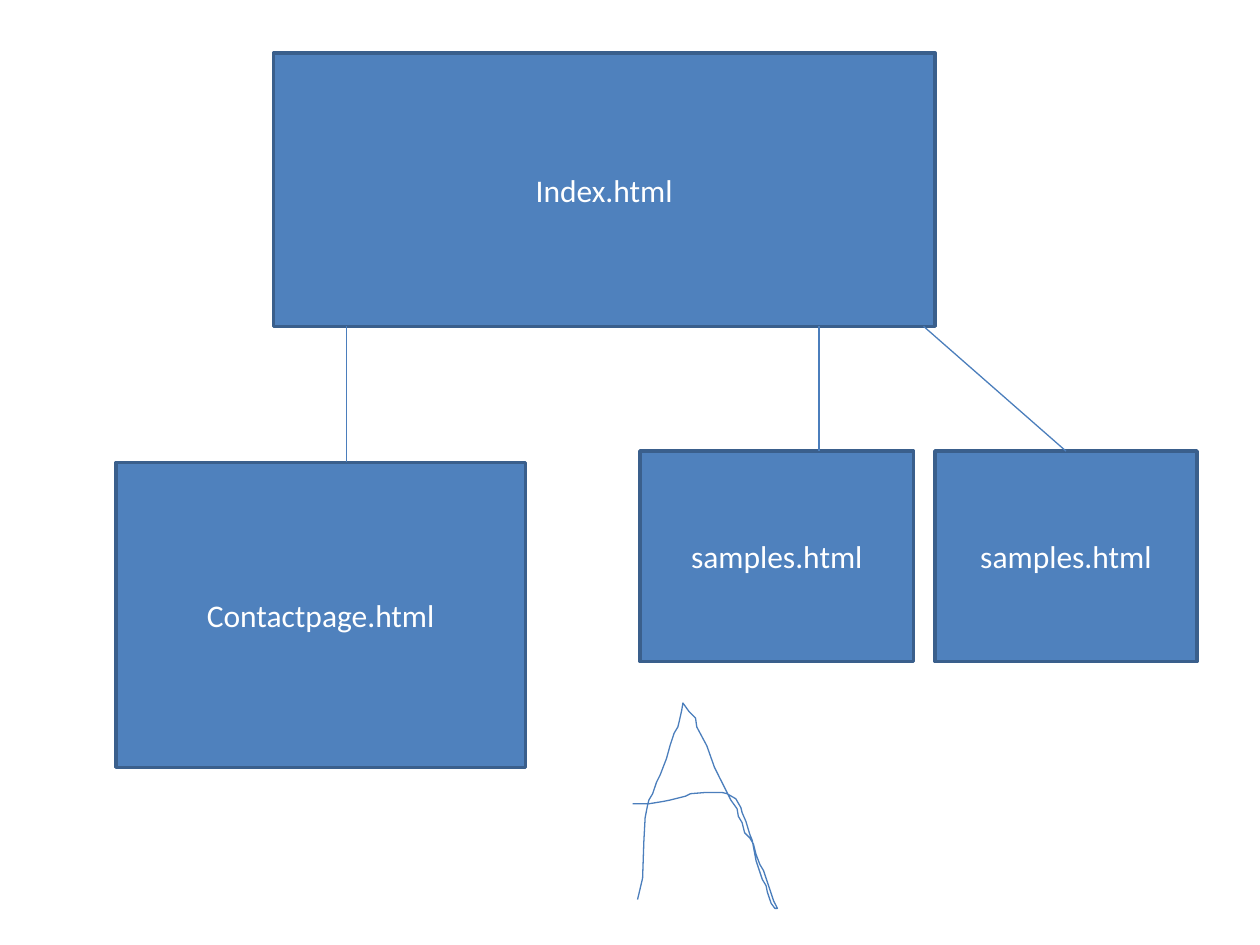
from lxml.etree import SubElement
from pptx import Presentation
from pptx.dml.color import RGBColor
from pptx.enum.shapes import MSO_CONNECTOR, MSO_SHAPE
from pptx.enum.text import MSO_ANCHOR, PP_ALIGN
from pptx.oxml.ns import qn
from pptx.util import Inches, Pt

BOX_FILL, BOX_LINE = "4F81BD", "3A5F8C"
LINK_LINE, TEXT_COLOR = "4B7EBC", "FFFFFF"

# Pen stroke of the handwritten A, in hundredths of an inch from its box corner
LETTER_STROKE = [
    (4, 159), (8, 142), (9, 113), (10, 94), (12, 84), (13, 80), (16, 75),
    (19, 66), (22, 60), (27, 47), (30, 36), (33, 27), (36, 22), (37, 18),
    (39, 9), (40, 3), (45, 10), (50, 15), (51, 22), (59, 37), (65, 54),
    (69, 62), (75, 74), (78, 80), (83, 87), (84, 93), (87, 98), (89, 106),
    (93, 110), (96, 115), (98, 123), (101, 131), (104, 136), (109, 151),
    (112, 160), (115, 166), (113, 166), (110, 162), (107, 153), (106, 148),
    (103, 143), (101, 137), (98, 128), (95, 112), (93, 107), (90, 97),
    (87, 90), (86, 86), (82, 79), (75, 75), (71, 74), (58, 74), (46, 75),
    (42, 77), (30, 80), (25, 81), (13, 83), (0, 83),
]


def color(hex_string):
    return RGBColor.from_string(hex_string)


def style_line(line, hex_string, width):
    line.color.rgb = color(hex_string)
    line.width = Pt(width)


def add_page_box(slide, left, top, width, height, name):
    shape = slide.shapes.add_shape(
        MSO_SHAPE.RECTANGLE, Inches(left), Inches(top), Inches(width), Inches(height))
    shape.shadow.inherit = False
    shape.fill.solid()
    shape.fill.fore_color.rgb = color(BOX_FILL)
    style_line(shape.line, BOX_LINE, 2)
    text_frame = shape.text_frame
    text_frame.text = name
    text_frame.vertical_anchor = MSO_ANCHOR.MIDDLE
    paragraph = text_frame.paragraphs[0]
    paragraph.alignment = PP_ALIGN.CENTER
    font = paragraph.runs[0].font
    font.name, font.size = "Calibri", Pt(18)
    font.color.rgb = color(TEXT_COLOR)
    return shape


def add_link(slide, parent, child, start_x, end_x=None):
    """Link parent's bottom to child's top; without end_x, join the top's middle."""
    connector = slide.shapes.add_connector(
        MSO_CONNECTOR.STRAIGHT, Inches(start_x), parent.top + parent.height,
        Inches(end_x or start_x), child.top)
    if end_x is None:
        connector.end_connect(child, 0)
    style_line(connector.line, LINK_LINE, 0.75)
    SubElement(connector._element.spPr, qn("a:effectLst"))


def add_site_map(slide):
    index = add_page_box(slide, 2.17, 0.42, 5.25, 2.17, "Index.html")
    contact = add_page_box(slide, 0.92, 3.67, 3.25, 2.42, "Contactpage.html")
    first_samples = add_page_box(slide, 5.08, 3.58, 2.17, 1.67, "samples.html")
    second_samples = add_page_box(slide, 7.42, 3.58, 2.08, 1.67, "samples.html")
    add_link(slide, index, contact, 2.75, 2.75)
    add_link(slide, index, first_samples, 6.5, 6.5)
    add_link(slide, index, second_samples, 7.33)


def add_handwritten_letter(slide, left, top):
    builder = slide.shapes.build_freeform(*LETTER_STROKE[0], scale=Inches(0.01))
    builder.add_line_segments(LETTER_STROKE[1:], close=False)
    letter = builder.convert_to_shape(Inches(left), Inches(top))
    letter.shadow.inherit = False
    letter.fill.background()
    style_line(letter.line, LINK_LINE, 0.75)


def main():
    presentation = Presentation()
    presentation.slide_width, presentation.slide_height = Inches(10), Inches(7.5)
    slide = presentation.slides.add_slide(presentation.slide_layouts[6])
    add_site_map(slide)
    add_handwritten_letter(slide, 5.02, 5.55)
    presentation.save("out.pptx")


if __name__ == "__main__":
    main()
